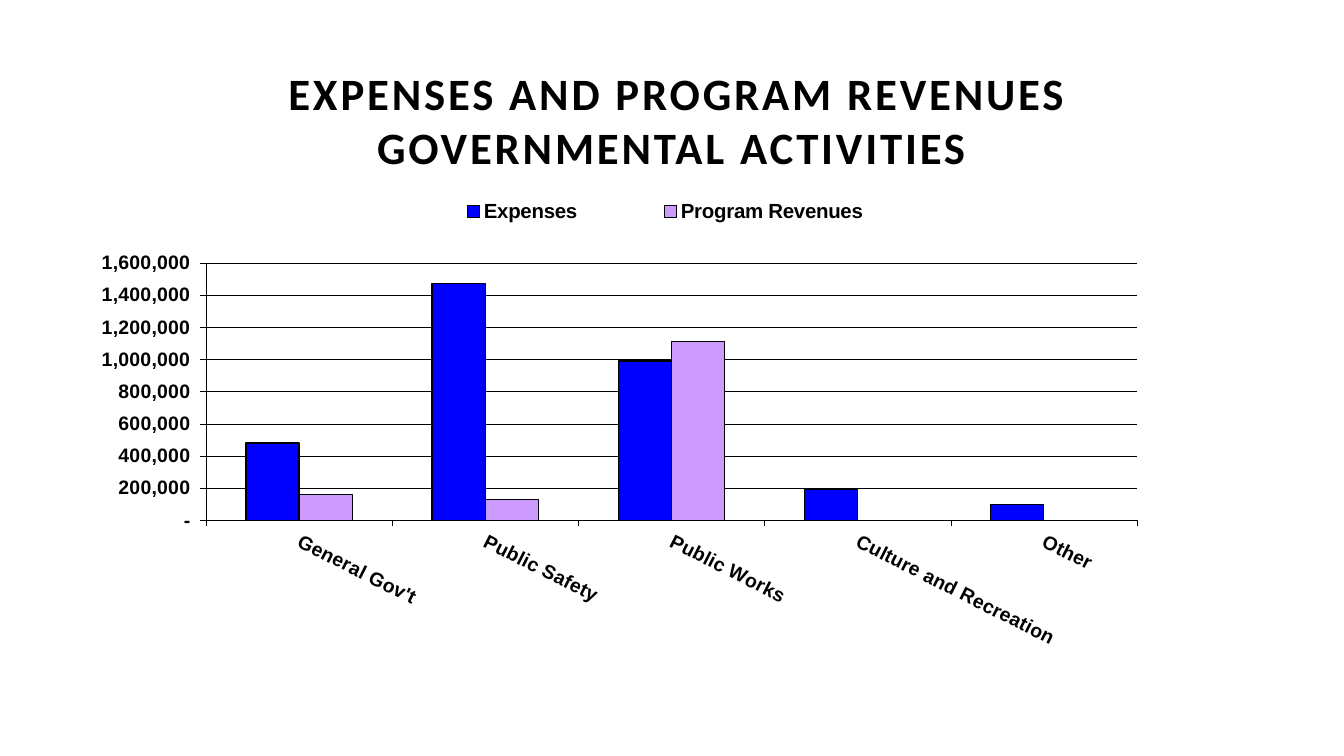
from lxml import etree
from pptx import Presentation
from pptx.chart.data import CategoryChartData
from pptx.dml.color import RGBColor
from pptx.enum.chart import XL_CHART_TYPE, XL_LEGEND_POSITION, XL_TICK_LABEL_POSITION, XL_TICK_MARK
from pptx.enum.text import MSO_ANCHOR, MSO_AUTO_SIZE, PP_ALIGN
from pptx.oxml.ns import qn
from pptx.util import Emu, Pt

COLORS = {"ink": "000000", "expenses": "0000FF", "revenues": "CC99FF"}
PX = 914400 / 100.8


def style_font(font, name, size):
    font.name, font.size, font.bold = name, Pt(size), True
    font.color.rgb = RGBColor.from_string(COLORS["ink"])


def set_layout(element, x, y, w, h, inner=False):
    """Place a plot area or legend by fractions of the chart."""
    for old in element.findall(qn("c:layout")):
        element.remove(old)
    layout = etree.Element(qn("c:layout"))
    manual = etree.SubElement(layout, qn("c:manualLayout"))
    entries = [("layoutTarget", "inner")] if inner else []
    entries += [("xMode", "edge"), ("yMode", "edge"), ("x", x), ("y", y), ("w", w), ("h", h)]
    for tag, val in entries:
        etree.SubElement(manual, qn(f"c:{tag}")).set("val", str(val))
    position = element.find(qn("c:legendPos"))
    if position is None:
        element.insert(0, layout)
    else:
        position.addnext(layout)


prs = Presentation()
prs.slide_width, prs.slide_height = Emu(int(1344 * PX)), Emu(int(756 * PX))
s = prs.slides.add_slide(prs.slide_layouts[5])

# Title
title = s.shapes.title
title.left, title.top, title.width, title.height = [Emu(int(v * PX)) for v in (25, 62, 1293, 116)]
tf = title.text_frame
tf.word_wrap = True
tf.auto_size = MSO_AUTO_SIZE.NONE
tf.vertical_anchor = MSO_ANCHOR.MIDDLE
p = tf.paragraphs[0]
p.alignment = PP_ALIGN.CENTER
for i, line in enumerate([" EXPENSES AND PROGRAM REVENUES", "GOVERNMENTAL ACTIVITIES"]):
    if i:
        p.add_line_break()
    r = p.add_run()
    r.text = line
    style_font(r.font, "Calibri", 32)
    r.font._element.set("spc", "200")

# Chart data
data = CategoryChartData()
data.categories = ["General Gov't", "Public Safety", "Public Works", "Culture and Recreation", "Other"]
data.add_series("Expenses", [480000, 1470000, 990000, 190000, 100000])
data.add_series("Program Revenues", [160000, 130000, 1110000, 0, 0])
box = [Emu(int(v * PX)) for v in (25, 190, 1293, 486)]
chart = s.shapes.add_chart(XL_CHART_TYPE.COLUMN_CLUSTERED, *box, data).chart
chart.has_title = False
style_font(chart.font, "Arial", 17.9)

# Columns
plot = chart.plots[0]
plot.gap_width, plot.overlap, plot.vary_by_categories = 150, 0, False
for series, key in zip(plot.series, ("expenses", "revenues")):
    series.format.fill.solid()
    series.format.fill.fore_color.rgb = RGBColor.from_string(COLORS[key])
    series.format.line.color.rgb = RGBColor.from_string(COLORS["ink"])
    series.format.line.width = Pt(1)

# Axes and gridlines
cat, val = chart.category_axis, chart.value_axis
val.has_major_gridlines = True
val.minimum_scale, val.maximum_scale, val.major_unit = 0, 1600000, 200000
for axis in (cat, val):
    axis.major_tick_mark, axis.minor_tick_mark = XL_TICK_MARK.OUTSIDE, XL_TICK_MARK.NONE
    style_font(axis.tick_labels.font, "Arial", 13.9)
for lined in (cat, val, val.major_gridlines):
    lined.format.line.color.rgb = RGBColor.from_string(COLORS["ink"])
    lined.format.line.width = Pt(0.25)
cat.tick_label_position = XL_TICK_LABEL_POSITION.LOW
cat._element.find(qn("c:txPr")).find(qn("a:bodyPr")).set("rot", str(27 * 60000))
val.tick_labels.number_format = '_(* #,##0_);_(* \\(#,##0\\);_(* "-"_);_(@_)'
val.tick_labels.number_format_is_linked = False

# Legend and plot placement
chart.has_legend = True
chart.legend.position = XL_LEGEND_POSITION.RIGHT
chart.legend.include_in_layout = False
style_font(chart.legend.font, "Arial", 14.6)
set_layout(chart.legend._element, 0.28, 0.01, 0.43, 0.07)
set_layout(chart._chartSpace.chart.plotArea, 0.14, 0.15, 0.72, 0.53, inner=True)

prs.save("out.pptx")
